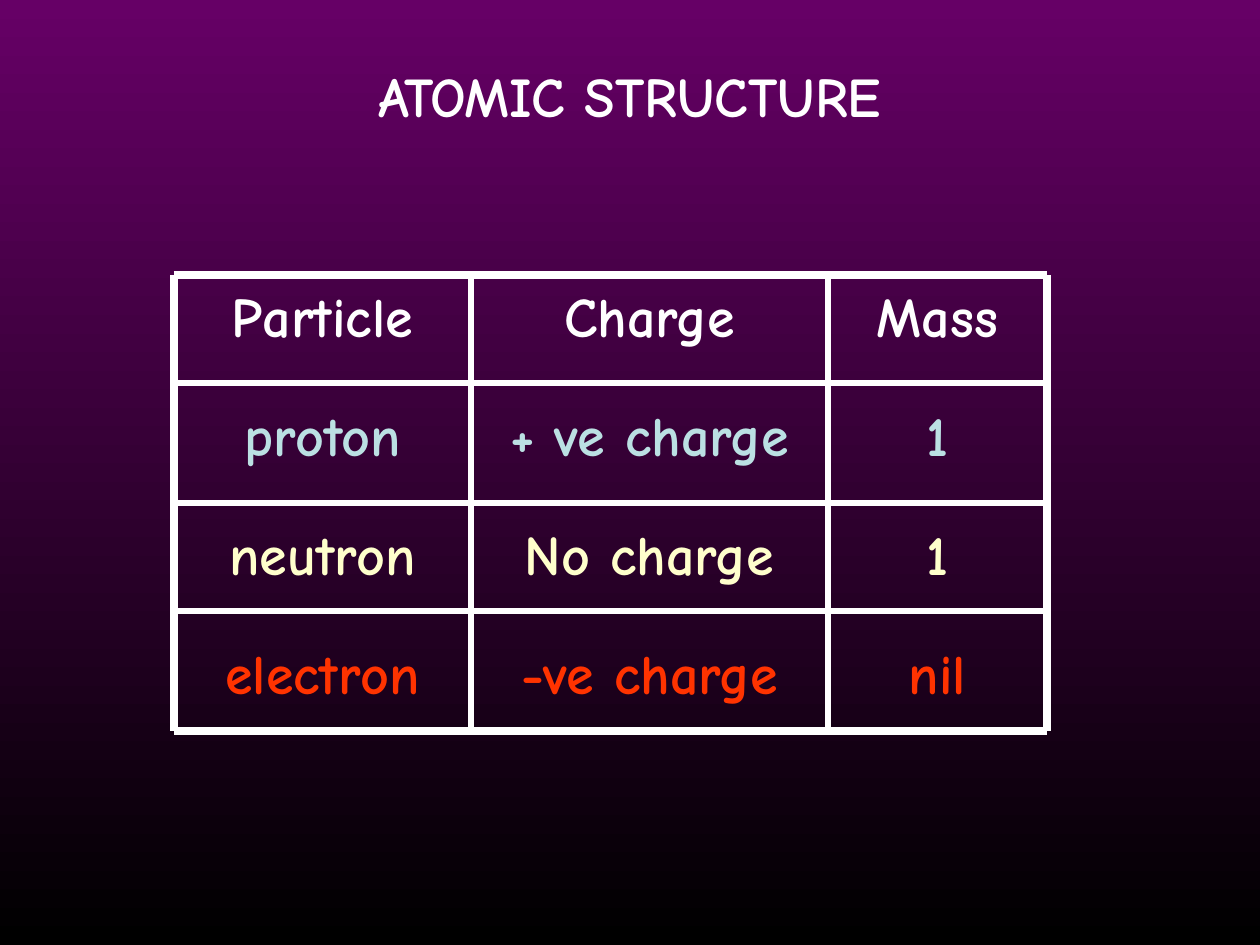
from lxml import etree
from pptx import Presentation
from pptx.dml.color import RGBColor
from pptx.enum import shapes, text
from pptx.oxml.ns import qn
from pptx.util import Pt

PX = 914400 // 126
WHITE = "FFFFFF"
TITLE = "ATOMIC STRUCTURE"
ROWS = [
    (WHITE, ["Particle", "Charge", "Mass"]),
    ("BBE0E3", ["proton", "+ ve charge", "1"]),
    ("FFFFCC", ["neutron", "No charge", "1"]),
    ("FF3300", ["electron", "-ve charge", "nil"]),
]
COLUMN_EDGES = [174, 471, 828, 1047]
ROW_EDGES = [275, 383, 503, 611, 731]
ROW_STEP = 119
BACKGROUND = ["660066", "000000"]


def rgb(value):
    return RGBColor.from_string(value)


def add_label(s, words, x, y, w, color):
    tf = s.shapes.add_textbox(x * PX, y * PX, w * PX, 79 * PX).text_frame
    tf.word_wrap = True
    tf.auto_size = text.MSO_AUTO_SIZE.SHAPE_TO_FIT_TEXT
    p = tf.paragraphs[0]
    p.text = words
    p.alignment = text.PP_ALIGN.CENTER
    p.font.name = "Comic Neue"
    p.font.size = Pt(32)
    p.font.bold = True
    p.font.color.rgb = rgb(color)


def add_rule(s, x1, y1, x2, y2, outer):
    line = s.shapes.add_connector(
        shapes.MSO_CONNECTOR.STRAIGHT, x1 * PX, y1 * PX, x2 * PX, y2 * PX)
    line.line.color.rgb = rgb(WHITE)
    line.line.width = Pt(4.5 if outer else 3)
    etree.SubElement(line._element.spPr, qn("a:effectLst"))


prs = Presentation()
prs.slide_width, prs.slide_height = 1260 * PX, 945 * PX
s = prs.slides.add_slide(prs.slide_layouts[6])

fill = s.background.fill
fill.gradient()
fill.gradient_angle = 270
for i, (stop, color) in enumerate(zip(fill.gradient_stops, BACKGROUND)):
    stop.color.rgb = rgb(color)
    stop.position = i

add_label(s, TITLE, 0, 55, 1260, WHITE)

left, right = COLUMN_EDGES[0], COLUMN_EDGES[-1]
top, bottom = ROW_EDGES[0], ROW_EDGES[-1]
for i, (color, cells) in enumerate(ROWS):
    for words, x1, x2 in zip(cells, COLUMN_EDGES, COLUMN_EDGES[1:]):
        add_label(s, words, x1, top + i * ROW_STEP, x2 - x1, color)

for x in COLUMN_EDGES:
    add_rule(s, x, top, x, bottom, x in (left, right))
for y in ROW_EDGES:
    add_rule(s, left, y, right, y, y in (top, bottom))

prs.save("out.pptx")
